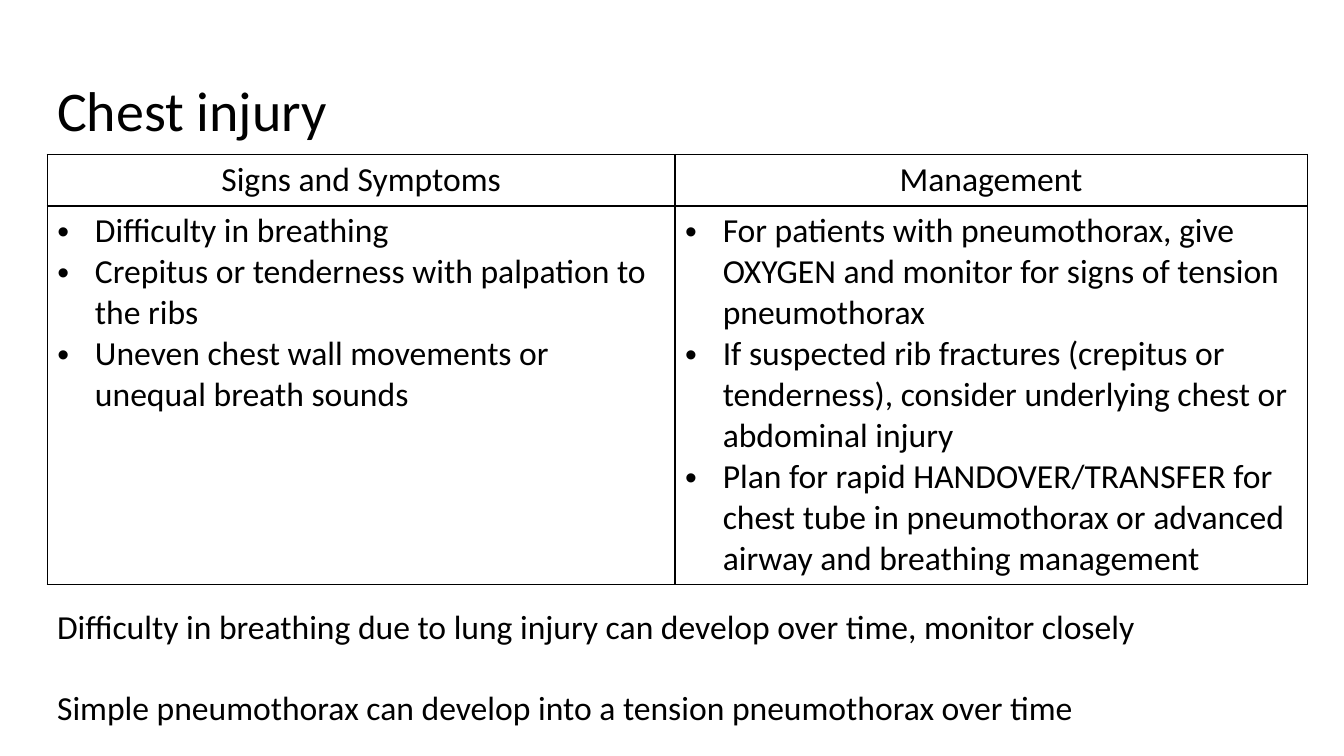
from dataclasses import dataclass

import pptx
import pptx.dml.color
import pptx.enum.text
import pptx.oxml
import pptx.oxml.ns
import pptx.util
from pptx.util import Cm


@dataclass(frozen=True)
class Theme:
    font: str = "Calibri"
    ink: str = "000000"
    title_size: int = 40
    body_size: int = 24
    border_width: int = 1


@dataclass(frozen=True)
class Box:
    left: int
    top: int
    width: int
    height: int


THEME = Theme()
BULLET_INDENT = Cm(0.95)
HEADER_HEIGHT = Cm(1.3)
SIGNS_WIDTH = Cm(15.82)

TITLE = "Chest injury"
COLUMNS = {
    "Signs and Symptoms": [
        "Difficulty in breathing",
        "Crepitus or tenderness with palpation to the ribs",
        "Uneven chest wall movements or unequal breath sounds",
    ],
    "Management": [
        "For patients with pneumothorax, give OXYGEN and monitor for signs of tension pneumothorax",
        "If suspected rib fractures (crepitus or tenderness), consider underlying chest or abdominal injury",
        "Plan for rapid HANDOVER/TRANSFER for chest tube in pneumothorax or advanced airway and breathing management",
    ],
}
WARNINGS = [
    "Difficulty in breathing due to lung injury can develop over time, monitor closely",
    "Simple pneumothorax can develop into a tension pneumothorax over time",
]


def add_element(parent, tag, **attributes):
    element = pptx.oxml.parse_xml(f"<a:{tag} {pptx.oxml.ns.nsdecls('a')}/>")
    for name, value in attributes.items():
        element.set(name, str(value))
    parent.append(element)
    return element


def add_bullet(paragraph):
    properties = paragraph._p.get_or_add_pPr()
    properties.set("marL", str(BULLET_INDENT))
    properties.set("indent", str(-BULLET_INDENT))
    add_element(properties, "buFont", typeface="Arial")
    add_element(properties, "buChar", char="•")


def write_paragraphs(text_frame, texts, size=THEME.body_size, alignment=None,
                     bulleted=False, gap=0):
    text_frame.word_wrap = True
    for index, text in enumerate(texts):
        paragraph = text_frame.add_paragraph() if index else text_frame.paragraphs[0]
        if index and gap:
            paragraph.space_before = pptx.util.Pt(gap)
        if alignment is not None:
            paragraph.alignment = alignment
        if bulleted:
            add_bullet(paragraph)
        run = paragraph.add_run()
        run.text = text
        run.font.name = THEME.font
        run.font.size = pptx.util.Pt(size)
        run.font.color.rgb = pptx.dml.color.RGBColor.from_string(THEME.ink)


def style_cell(cell):
    properties = cell._tc.get_or_add_tcPr()
    for side in ("lnL", "lnR", "lnT", "lnB"):
        border = add_element(properties, side, w=pptx.util.Pt(THEME.border_width))
        fill = add_element(border, "solidFill")
        add_element(fill, "srgbClr", val=THEME.ink)
    cell.fill.background()


def add_title(slide, box):
    shape = slide.shapes.add_textbox(box.left, box.top, box.width, box.height)
    shape.text_frame.vertical_anchor = pptx.enum.text.MSO_ANCHOR.MIDDLE
    write_paragraphs(shape.text_frame, [TITLE], THEME.title_size)
    shape.text_frame.paragraphs[0].line_spacing = 0.9


def add_injury_table(slide, box):
    table = slide.shapes.add_table(
        2, len(COLUMNS), box.left, box.top, box.width, box.height).table
    table.first_row = False
    table.horz_banding = False
    table.columns[0].width = SIGNS_WIDTH
    table.columns[1].width = box.width - SIGNS_WIDTH
    table.rows[0].height = HEADER_HEIGHT
    table.rows[1].height = box.height - HEADER_HEIGHT
    for column, (heading, points) in enumerate(COLUMNS.items()):
        header, body = table.cell(0, column), table.cell(1, column)
        write_paragraphs(header.text_frame, [heading],
                         alignment=pptx.enum.text.PP_ALIGN.CENTER)
        write_paragraphs(body.text_frame, points, bulleted=True)
        style_cell(header)
        style_cell(body)


def add_warnings(slide, box):
    shape = slide.shapes.add_textbox(box.left, box.top, box.width, box.height)
    write_paragraphs(shape.text_frame, WARNINGS, gap=29)


def main():
    presentation = pptx.Presentation()
    presentation.slide_width = Cm(33.87)
    presentation.slide_height = Cm(19.05)
    slide = presentation.slides.add_slide(presentation.slide_layouts[6])
    left, width = Cm(1.19), Cm(31.75)
    add_title(slide, Box(left, Cm(1.02), Cm(31.5), Cm(3.68)))
    add_injury_table(slide, Box(left, Cm(3.89), width, Cm(10.84)))
    add_warnings(slide, Box(left, Cm(15.14), width, Cm(3.33)))
    presentation.save("out.pptx")


if __name__ == "__main__":
    main()
